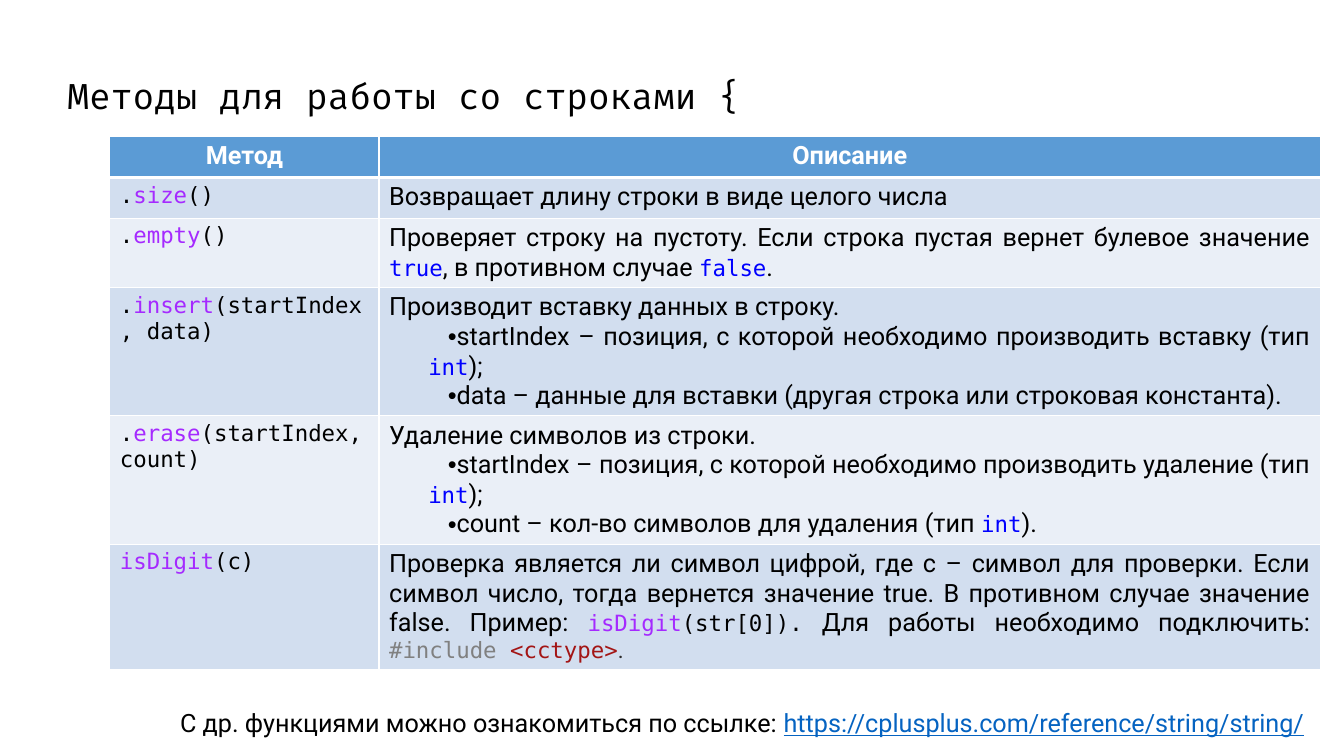
from lxml import etree
from pptx import Presentation
from pptx.dml.color import RGBColor
from pptx.enum.text import MSO_ANCHOR, MSO_AUTO_SIZE, PP_ALIGN
from pptx.oxml.ns import qn
from pptx.util import Pt

LEFT, CENTER = PP_ALIGN.LEFT, PP_ALIGN.CENTER
RIGHT, JUSTIFY = PP_ALIGN.RIGHT, PP_ALIGN.JUSTIFY
MIDDLE = MSO_ANCHOR.MIDDLE
NO_FIT, GROW = MSO_AUTO_SIZE.NONE, MSO_AUTO_SIZE.SHAPE_TO_FIT_TEXT

BLACK = RGBColor(0x00, 0x00, 0x00)
WHITE = RGBColor(0xFF, 0xFF, 0xFF)
HEADER_BLUE = RGBColor(0x5B, 0x9B, 0xD5)
BAND_DARK = RGBColor(0xD2, 0xDE, 0xEF)
BAND_LIGHT = RGBColor(0xEA, 0xEF, 0xF7)
METHOD_PURPLE = RGBColor(0xA5, 0x2A, 0xFF)
KEYWORD_BLUE = RGBColor(0x00, 0x00, 0xFF)
DIRECTIVE_GRAY = RGBColor(0x80, 0x80, 0x80)
HEADER_RED = RGBColor(0xA3, 0x15, 0x15)
STOP_GRAY = RGBColor(0x2B, 0x2B, 0x2B)
LINK_BLUE = RGBColor(0x05, 0x63, 0xC1)

TITLE_FONT, BODY_FONT, CODE_FONT = "Fira Code", "Roboto", "DejaVu Sans Mono"


def words(text, font=BODY_FONT, size=18, color=BLACK, bold=False, underline=False):
    """One run of text with its format."""
    return {"text": text, "font": font, "size": size, "color": color,
            "bold": bold, "underline": underline}


def monospace(text, color=BLACK):
    return words(text, font=CODE_FONT, size=16, color=color)


def signature(name, arguments, prefix="."):
    runs = [monospace(name, METHOD_PURPLE), monospace(arguments)]
    return [monospace(prefix)] + runs if prefix else runs


class SlideBuilder:
    def __init__(self, presentation):
        self.slide = presentation.slides.add_slide(presentation.slide_layouts[5])

    def fill_paragraph(self, paragraph, runs, align=LEFT, bullet=False):
        paragraph.alignment = align
        if bullet:
            properties = paragraph._p.get_or_add_pPr()
            properties.set("marL", str(Pt(28)))
            properties.set("indent", str(Pt(14)))
            etree.SubElement(properties, qn("a:buFont")).set("typeface", "Arial")
            etree.SubElement(properties, qn("a:buChar")).set("char", "•")
        for item in runs:
            run = paragraph.add_run()
            run.text = item["text"]
            run.font.name = item["font"]
            run.font.size = Pt(item["size"])
            run.font.bold = item["bold"]
            run.font.underline = item["underline"]
            run.font.color.rgb = item["color"]

    def title(self, text, left, top, width, height):
        shape = self.slide.shapes.title
        shape.left, shape.top = Pt(left), Pt(top)
        shape.width, shape.height = Pt(width), Pt(height)
        frame = shape.text_frame
        frame.auto_size = NO_FIT
        frame.vertical_anchor = MIDDLE
        paragraph = frame.paragraphs[0]
        paragraph.line_spacing = 0.9
        self.fill_paragraph(paragraph, [words(text, font=TITLE_FONT, size=25.2)])

    def text_box(self, runs, left, top, width, height, align):
        shape = self.slide.shapes.add_textbox(Pt(left), Pt(top), Pt(width), Pt(height))
        frame = shape.text_frame
        frame.word_wrap = True
        frame.auto_size = GROW
        self.fill_paragraph(frame.paragraphs[0], runs, align)

    def cell(self, cell, paragraphs, align, fill, top=1, bottom=1):
        properties = cell._tc.get_or_add_tcPr()
        for side, width in (("L", 1), ("R", 1), ("T", top), ("B", bottom)):
            line = etree.SubElement(properties, qn(f"a:ln{side}"))
            line.set("w", str(Pt(width)))
            solid = etree.SubElement(line, qn("a:solidFill"))
            etree.SubElement(solid, qn("a:srgbClr")).set("val", str(WHITE))
        cell.fill.solid()
        cell.fill.fore_color.rgb = fill
        frame = cell.text_frame
        for index, runs in enumerate(paragraphs):
            paragraph = frame.add_paragraph() if index else frame.paragraphs[0]
            self.fill_paragraph(paragraph, runs, align, bullet=index > 0)

    def table(self, headings, rows, left, top, widths, row_height):
        count = len(rows) + 1
        frame = self.slide.shapes.add_table(count, len(widths), Pt(left), Pt(top),
                                            Pt(sum(widths)), Pt(row_height * count))
        table = frame.table
        for column, width in zip(table.columns, widths):
            column.width = Pt(width)
        for row in table.rows:
            row.height = Pt(row_height)
        for column, heading in enumerate(headings):
            runs = [words(heading, color=WHITE, bold=True)]
            self.cell(table.cell(0, column), [runs], CENTER, HEADER_BLUE, bottom=3)
        for index, (method, description) in enumerate(rows, start=1):
            fill = BAND_DARK if index % 2 else BAND_LIGHT
            edge = 3 if index == 1 else 1
            self.cell(table.cell(index, 0), [method], LEFT, fill, top=edge)
            self.cell(table.cell(index, 1), description, JUSTIFY, fill, top=edge)


# Table content: method signature, then paragraphs (bulleted after the first)
INT = monospace("int", KEYWORD_BLUE)
METHODS = [
    (signature("size", "()"),
     [[words("Возвращает длину строки в виде целого числа")]]),
    (signature("empty", "()"),
     [[words("Проверяет строку на пустоту. Если строка пустая вернет булевое значение "),
       monospace("true", KEYWORD_BLUE), words(", в противном случае "),
       monospace("false", KEYWORD_BLUE), words(".")]]),
    (signature("insert", "(startIndex, data)"),
     [[words("Производит вставку данных в строку.")],
      [words("startIndex – позиция, с которой необходимо производить вставку (тип "),
       INT, words(");")],
      [words("data – данные для вставки (другая строка или строковая константа).")]]),
    (signature("erase", "(startIndex, count)"),
     [[words("Удаление символов из строки.")],
      [words("startIndex – позиция, с которой необходимо производить удаление (тип "),
       INT, words(");")],
      [words("count – кол-во символов для удаления (тип "), INT, words(").")]]),
    (signature("isDigit", "(c)", prefix=""),
     [[words("Проверка является ли символ цифрой, где c – символ для проверки. "
             "Если символ число, тогда вернется значение true. "
             "В противном случае значение false. Пример: "),
       *signature("isDigit", "(str[0]).", prefix=""),
       words(" Для работы необходимо подключить: "),
       monospace("#include ", DIRECTIVE_GRAY), monospace("<cctype>", HEADER_RED),
       words(".", size=16, color=STOP_GRAY)]]),
]


def main():
    presentation = Presentation()
    presentation.slide_width, presentation.slide_height = Pt(960), Pt(540)
    builder = SlideBuilder(presentation)

    # Title
    builder.title("Методы для работы со строками {", 41, 52.5, 902, 35.5)

    # Table of string methods
    builder.table(["Метод", "Описание"], METHODS, 78.5, 97.5, [192.25, 672.5], 29.2)

    # Reference link
    builder.text_box([words("С др. функциями можно ознакомиться по ссылке: "),
                      words("https://cplusplus.com/reference/string/string/",
                            color=LINK_BLUE, underline=True),
                      words(" ")],
                     78.5, 502, 864.75, 29, RIGHT)

    presentation.save("out.pptx")


if __name__ == "__main__":
    main()
